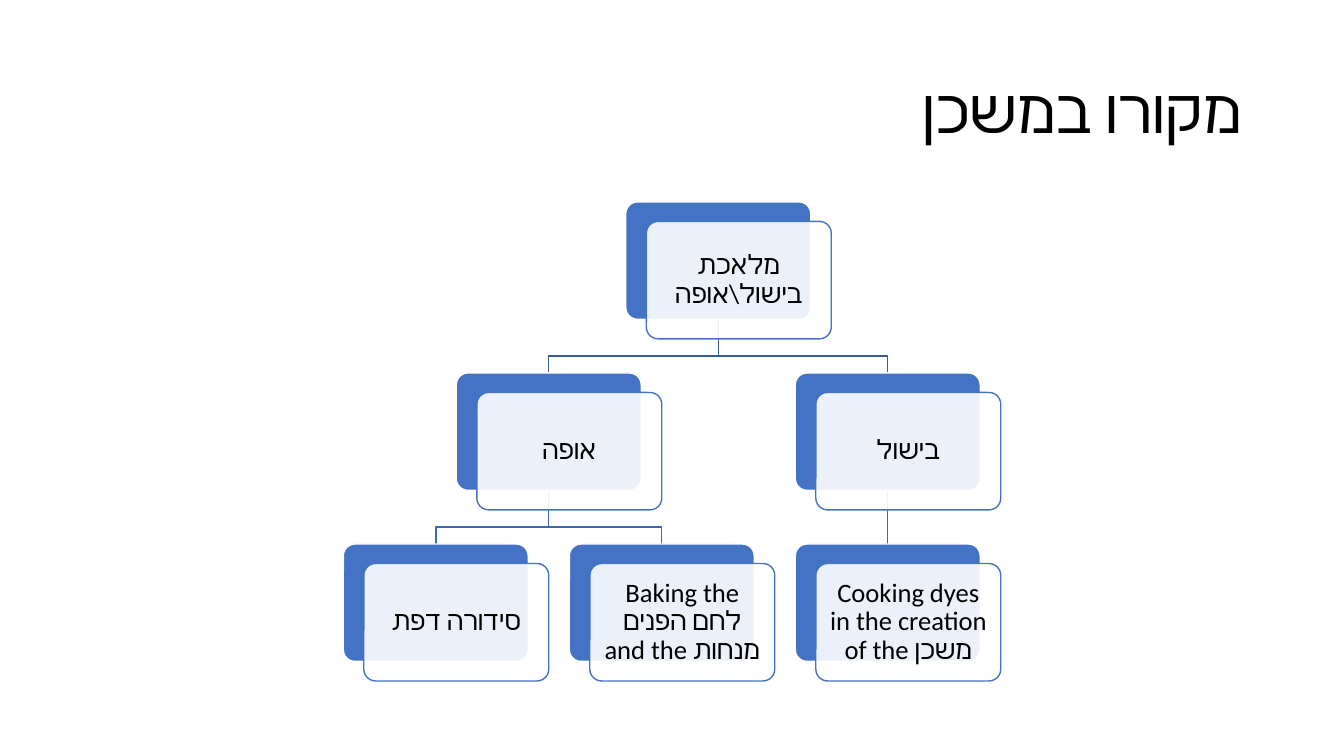
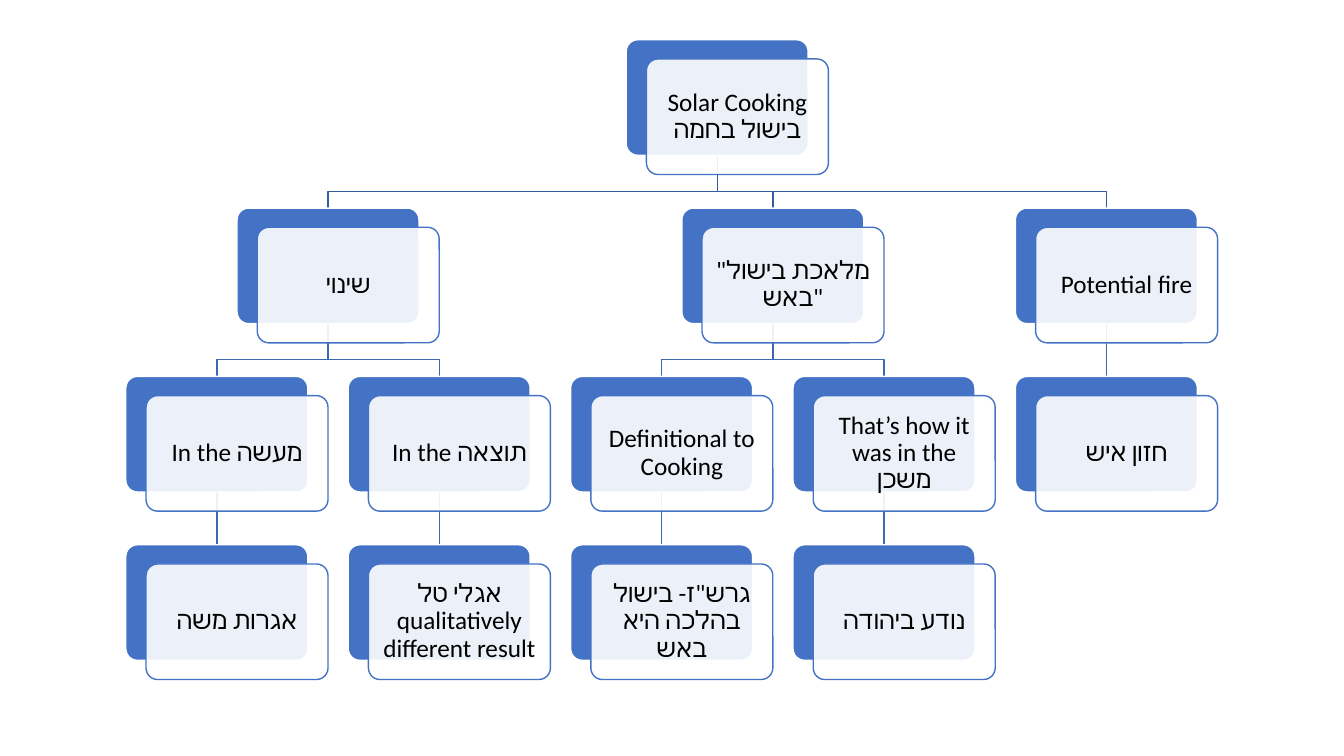
from lxml import etree
from pptx import Presentation
from pptx.dml.color import RGBColor
from pptx.enum import shapes, text
from pptx.oxml.ns import qn
from pptx.util import Pt

FONT = "Calibri"
BLACK = RGBColor(0x00, 0x00, 0x00)
WHITE = RGBColor(0xFF, 0xFF, 0xFF)
BLUE = RGBColor(0x44, 0x72, 0xC4)
ROOT_LINK = RGBColor(0x36, 0x5B, 0x9D)
LOWER_LINK = RGBColor(0x3E, 0x67, 0xB2)

# A node is (label, children).
TABERNACLE_TREE = ("מלאכת בישול\\אופה", [
    ("אופה", [
        ("סידורה דפת", []),
        ("Baking the לחם הפנים and the מנחות", []),
    ]),
    ("בישול", [("Cooking dyes in the creation of the משכן", [])]),
])
SOLAR_TREE = ("Solar Cooking\nבישול בחמה", [
    ("שינוי", [
        ("In the מעשה", [("אגרות משה", [])]),
        ("In the תוצאה", [("אגלי טל\nqualitatively different result", [])]),
    ]),
    ('"מלאכת בישול באש"', [
        ("Definitional to Cooking", [("גרש\"ז- בישול בהלכה היא באש", [])]),
        ("That’s how it was in the משכן", [("נודע ביהודה", [])]),
    ]),
    ("Potential fire", [("חזון איש", [])]),
])
# Lengths in points; first_center is the middle of the leftmost leaf.
SLIDES = [
    {"title": "מקורו במשכן", "tree": TABERNACLE_TREE, "first_center": 311.3,
     "top": 144.2, "box_width": 132.1, "font_size": 19},
    {"title": None, "tree": SOLAR_TREE, "first_center": 154.9,
     "top": 28.4, "box_width": 130, "font_size": 18},
]

# Tree proportions, relative to the box width.
BOX_HEIGHT = 0.635
COLUMN_PITCH = 1.222
LEVEL_PITCH = 0.925
FRONT_SHIFT_X = 0.111
FRONT_SHIFT_Y = 0.1055
BEND_ABOVE_CHILD = 0.0925


def format_paragraph(paragraph, size, alignment):
    paragraph.alignment = alignment
    paragraph.line_spacing = 0.9
    for run in paragraph.runs:
        run.font.size = Pt(size)
        run.font.name = FONT
        run.font.color.rgb = BLACK
        etree.SubElement(run.font._element, qn("a:cs"), typeface=FONT)


def add_title(slide, title):
    frame = slide.shapes.add_textbox(Pt(66), Pt(28.8), Pt(828), Pt(104.4)).text_frame
    frame.word_wrap = True
    frame.vertical_anchor = text.MSO_ANCHOR.MIDDLE
    paragraph = frame.paragraphs[0]
    paragraph.text = title
    format_paragraph(paragraph, 44, text.PP_ALIGN.RIGHT)
    paragraph._p.get_or_add_pPr().set("rtl", "1")


def place_nodes(tree, first_center, top, width):
    """Return nodes as (label, center, top, level, parent index), parents first."""
    nodes = []
    leaf_count = 0

    def place(node, level, parent):
        nonlocal leaf_count
        label, children = node
        index = len(nodes)
        nodes.append(None)
        if children:
            centers = [place(child, level + 1, index) for child in children]
            center = (centers[0] + centers[-1]) / 2
        else:
            center = first_center + leaf_count * COLUMN_PITCH * width
            leaf_count += 1
        nodes[index] = (label, center, top + level * LEVEL_PITCH * width, level, parent)
        return center

    place(tree, 0, None)
    return nodes


def add_link(slide, start, end, bend_y, color):
    """Join two points: straight when aligned, otherwise with two right angles."""
    (start_x, start_y), (end_x, end_y) = start, end
    if abs(start_x - end_x) < 0.1:
        link = slide.shapes.add_connector(
            shapes.MSO_CONNECTOR.STRAIGHT, Pt(start_x), Pt(start_y), Pt(end_x), Pt(end_y))
        etree.SubElement(link._element.spPr, qn("a:effectLst"))
    else:
        builder = slide.shapes.build_freeform(Pt(start_x), Pt(start_y))
        corners = [(start_x, bend_y), (end_x, bend_y), end]
        builder.add_line_segments([(Pt(x), Pt(y)) for x, y in corners], close=False)
        link = builder.convert_to_shape()
        link.fill.background()
        link.shadow.inherit = False
    link.line.color.rgb = color
    link.line.width = Pt(1)


def add_card(slide, left, top, width, fill, outline):
    card = slide.shapes.add_shape(
        shapes.MSO_SHAPE.ROUNDED_RECTANGLE,
        Pt(left), Pt(top), Pt(width), Pt(BOX_HEIGHT * width))
    card.adjustments[0] = 0.1
    card.shadow.inherit = False
    card.fill.solid()
    card.fill.fore_color.rgb = fill
    card.line.color.rgb = outline
    card.line.width = Pt(1)
    return card


def add_node(slide, label, left, top, width, size):
    """Draw a blue card with a translucent labelled card shifted in front of it."""
    add_card(slide, left, top, width, BLUE, WHITE)
    front = add_card(slide, left + FRONT_SHIFT_X * width, top + FRONT_SHIFT_Y * width,
                     width, WHITE, BLUE)
    color = front._element.spPr.find(qn("a:solidFill")).find(qn("a:srgbClr"))
    etree.SubElement(color, qn("a:alpha"), val="90000")
    frame = front.text_frame
    frame.word_wrap = True
    frame.vertical_anchor = text.MSO_ANCHOR.MIDDLE
    inset = Pt(0.3 * size)
    frame.margin_left = frame.margin_right = inset
    frame.margin_top = frame.margin_bottom = inset
    paragraph = frame.paragraphs[0]
    paragraph.text = label
    format_paragraph(paragraph, size, text.PP_ALIGN.CENTER)


def add_tree(slide, tree, first_center, top, width, size):
    nodes = place_nodes(tree, first_center, top, width)
    for _, center, node_top, level, parent in nodes[1:]:
        _, parent_center, parent_top, _, _ = nodes[parent]
        add_link(slide, (parent_center, parent_top + BOX_HEIGHT * width),
                 (center, node_top), node_top - BEND_ABOVE_CHILD * width,
                 ROOT_LINK if level == 1 else LOWER_LINK)
    for label, center, node_top, _, _ in nodes:
        add_node(slide, label, center - width / 2, node_top, width, size)


def main():
    presentation = Presentation()
    presentation.slide_width = Pt(960)
    presentation.slide_height = Pt(540)
    for content in SLIDES:
        slide = presentation.slides.add_slide(presentation.slide_layouts[6])
        if content["title"]:
            add_title(slide, content["title"])
        add_tree(slide, content["tree"], content["first_center"], content["top"],
                 content["box_width"], content["font_size"])
    presentation.save("out.pptx")


if __name__ == "__main__":
    main()
